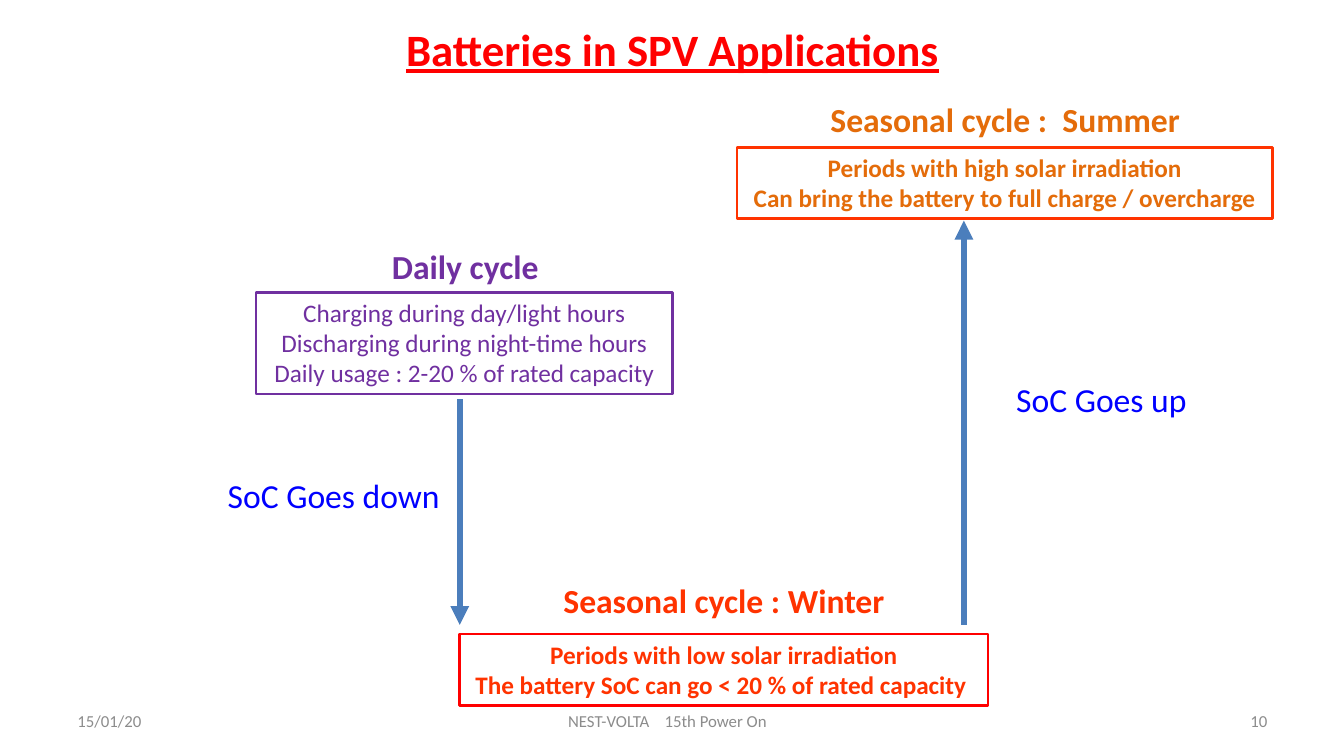
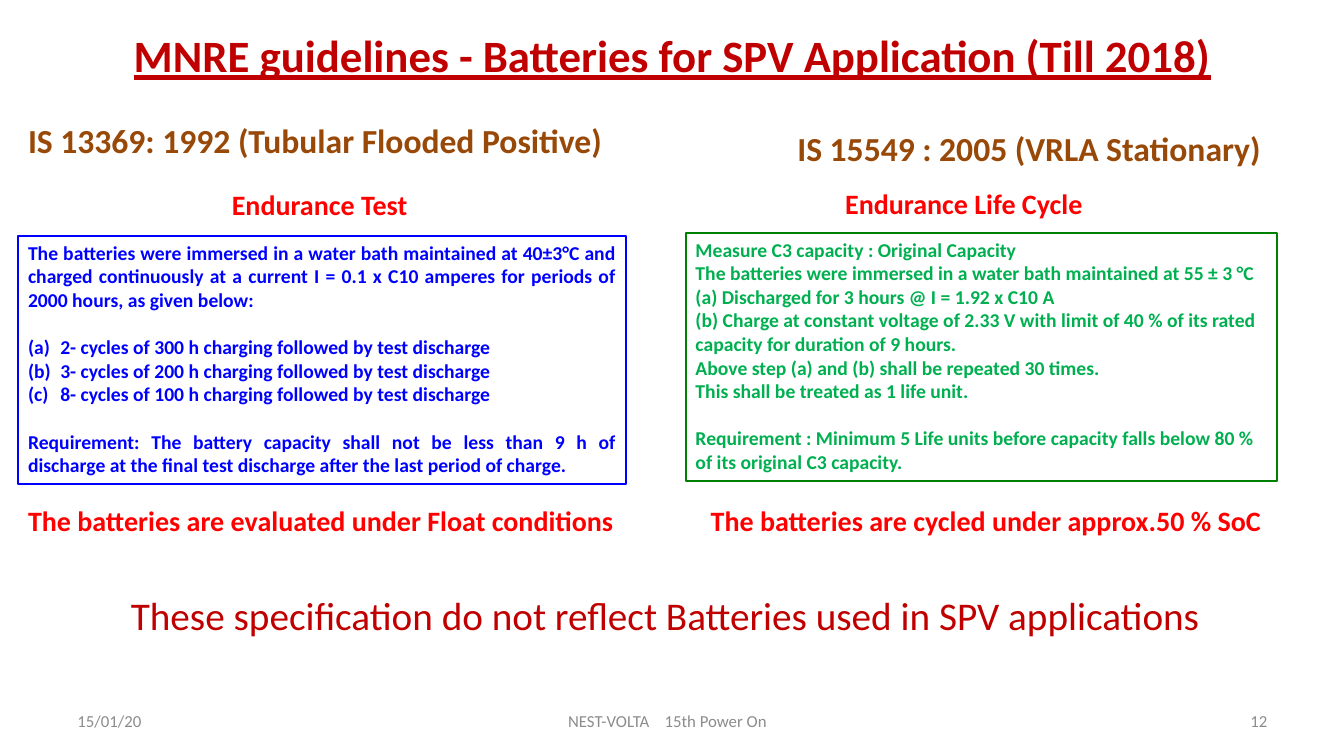
from lxml.etree import SubElement
from pptx import Presentation
from pptx.dml.color import RGBColor
from pptx.enum.shapes import MSO_CONNECTOR as Connector, MSO_SHAPE as Shape
from pptx.enum.text import MSO_ANCHOR as Anchor, PP_ALIGN as Align
from pptx.oxml.ns import qn
from pptx.util import Inches, Pt

RED, DARK_RED, VERMILION = "FF0000", "C00000", "FF3300"
ORANGE, BROWN, PURPLE = "E46C0A", "984807", "7030A0"
BLUE, STEEL, GREY = "0000FF", "4B7EBC", "8C8C8C"
GREEN, DARK_GREEN = "00B050", "008000"
FONT = "Calibri"
BLANK_LINE = 17  # points, the height of one line of 14 point text


def colour(hex_code):
    return RGBColor.from_string(hex_code)


class Slides:
    """Holds the shared style and the slide being built."""

    def __init__(self):
        self.deck = Presentation()
        self.deck.slide_width, self.deck.slide_height = Inches(13.33), Inches(7.5)
        self.page = None

    def new_page(self, title, title_colour, title_height, number):
        self.page = self.deck.slides.add_slide(self.deck.slide_layouts[5])
        box = self.page.shapes.title
        box.left, box.top = Inches(0.67), Inches(0)
        box.width, box.height = Inches(12), Inches(title_height)
        box.text_frame.vertical_anchor = Anchor.MIDDLE
        para = box.text_frame.paragraphs[0]
        para.alignment = Align.CENTER
        self.span(para, title, 32, title_colour, bold=True).font.underline = True
        self.footer(number)

    def footer(self, number):
        top, height = 6.95, 0.4
        date = self.label("15/01/20", 0.67, top, 3.11, height, 12, GREY)
        event = self.label("NEST-VOLTA", 4.51, top, 4.22, height, 12, GREY, align=Align.CENTER)
        page_number = self.label(number, 9.56, top, 3.11, height, 12, GREY, align=Align.RIGHT)
        # One widely spaced blank separates the host from the event
        para = event.text_frame.paragraphs[0]
        gap = self.span(para, " ", 12, GREY)
        gap.font._element.set("spc", "800")
        self.span(para, "15th Power On", 12, GREY)
        for box in (date, event, page_number):
            box.text_frame.vertical_anchor = Anchor.MIDDLE

    def span(self, para, text, size, hex_code, bold=False):
        span = para.add_run()
        span.text = text
        font = span.font
        font.name, font.size, font.bold = FONT, Pt(size), bold
        font.color.rgb = colour(hex_code)
        return span

    def label(self, text, left, top, width, height, size, hex_code,
              bold=False, align=Align.LEFT):
        box = self.page.shapes.add_textbox(
            Inches(left), Inches(top), Inches(width), Inches(height))
        box.text_frame.word_wrap = False
        para = box.text_frame.paragraphs[0]
        para.alignment = align
        self.span(para, text, size, hex_code, bold)
        return box

    def panel(self, lines, left, top, width, height, size, text_colour, line_colour,
              line_width, bold=True, align=Align.CENTER):
        """Outlined box with one paragraph per line; returns its paragraphs."""
        box = self.page.shapes.add_shape(
            Shape.RECTANGLE, Inches(left), Inches(top), Inches(width), Inches(height))
        box.shadow.inherit = False
        box.fill.background()
        box.line.color.rgb = colour(line_colour)
        box.line.width = Pt(line_width)
        frame = box.text_frame
        frame.word_wrap = True
        frame.vertical_anchor = Anchor.TOP
        for index, line in enumerate(lines):
            para = frame.add_paragraph() if index else frame.paragraphs[0]
            para.alignment = align
            self.span(para, line, size, text_colour, bold)
        return frame.paragraphs

    def letter(self, paras, indent):
        """Number paragraphs (a), (b), (c) with a hanging indent."""
        for para in paras:
            props = para._p.get_or_add_pPr()
            props.set("marL", str(Inches(indent)))
            props.set("indent", str(-Inches(indent)))
            SubElement(props, qn("a:buFont"), typeface="+mj-lt")
            SubElement(props, qn("a:buAutoNum"), type="alphaLcParenBoth")

    def arrow(self, x, start, end):
        line = self.page.shapes.add_connector(
            Connector.STRAIGHT, Inches(x), Inches(start), Inches(x), Inches(end))
        line.line.color.rgb = colour(STEEL)
        line.line.width = Pt(4.5)
        SubElement(line.line._get_or_add_ln(), qn("a:tailEnd"), type="triangle")
        SubElement(line._element.spPr, qn("a:effectLst"))


def build_cycles(slides):
    slides.new_page("Batteries in SPV Applications", RED, 0.97, "10")

    # Boxes for the three cycles
    slides.panel(["Charging during day/light hours",
                  "Discharging during night-time hours",
                  "Daily usage : 2-20 % of rated capacity"],
                 2.54, 2.9, 4.13, 1.01, 18, PURPLE, PURPLE, 2, bold=False)
    slides.panel(["Periods with low solar irradiation",
                  "The battery SoC can go < 20 % of rated capacity "],
                 4.56, 6.29, 5.24, 0.71, 18, VERMILION, RED, 1.75)
    slides.panel(["Periods with high solar irradiation",
                  "Can bring the battery to full charge / overcharge"],
                 7.31, 1.46, 5.31, 0.71, 18, ORANGE, VERMILION, 2)

    # Headings above the boxes
    for text, left, top, width, hex_code in (
            ("Daily cycle", 3.78, 2.39, 1.67, PURPLE),
            ("Seasonal cycle : Winter", 5.47, 5.7, 3.42, VERMILION),
            ("Seasonal cycle :  Summer", 8.12, 0.93, 3.7, ORANGE)):
        slides.label(text, left, top, width, 0.5, 24, hex_code, True, Align.CENTER)

    # Arrows and what they mean
    slides.arrow(4.56, 3.96, 6.2)
    slides.arrow(9.56, 6.2, 2.19)
    slides.label("SoC Goes down", 2.16, 4.66, 2.4, 0.5, 24, BLUE)
    slides.label("SoC Goes up", 9.98, 3.71, 1.91, 0.5, 24, BLUE)


def build_guidelines(slides):
    slides.new_page("MNRE guidelines - Batteries for SPV Application (Till 2018)",
                    DARK_RED, 1.09, "12")

    # Standards
    slides.label("IS 13369: 1992 (Tubular Flooded Positive)",
                 0.18, 1.14, 6.03, 0.5, 24, BROWN, True)
    slides.label("IS 15549 : 2005 (VRLA Stationary)",
                 7.81, 1.22, 4.86, 0.5, 24, BROWN, True)

    # Test names and conditions
    for text, left, top, width, align in (
            ("Endurance Test", 2.19, 1.81, 1.96, Align.CENTER),
            ("Endurance Life Cycle", 8.27, 1.8, 2.58, Align.CENTER),
            ("The batteries are evaluated under Float conditions",
             0.18, 4.95, 6.06, Align.LEFT),
            ("The batteries are cycled under approx.50 % SoC",
             6.95, 4.95, 5.72, Align.LEFT)):
        slides.label(text, left, top, width, 0.44, 20, RED, True, align)

    # Flooded battery test
    flooded = slides.panel(
        ["The batteries were immersed in a water bath maintained at 40±3°C and charged "
         "continuously at a current I = 0.1 x C10 amperes for periods of 2000 hours, "
         "as given below:",
         "2- cycles of 300 h charging followed by test discharge",
         "3- cycles of 200 h charging followed by test discharge",
         "8- cycles of 100 h charging followed by test discharge",
         "Requirement: The battery capacity shall not be less than 9 h of discharge at "
         "the final test discharge after the last period of charge."],
        0.18, 2.34, 6.03, 2.46, 14, BLUE, BLUE, 1.5, align=Align.JUSTIFY)

    # Sealed battery test
    sealed = slides.panel(
        ["Measure C3 capacity : Original Capacity",
         "The batteries were immersed in a water bath maintained at 55 ± 3 °C",
         "(a) Discharged for 3 hours @ I = 1.92 x C10 A",
         "(b) Charge at constant voltage of 2.33 V with limit of 40 % of its rated "
         "capacity for duration of 9 hours.",
         "Above step (a) and (b) shall be repeated 30 times.",
         "This shall be treated as 1 life unit.",
         "Requirement : Minimum 5 Life units before capacity falls below 80 % of its "
         "original C3 capacity."],
        6.8, 2.31, 5.87, 2.46, 14, GREEN, DARK_GREEN, 1.5, align=Align.LEFT)

    for para in (flooded[1], flooded[-1], sealed[-1]):
        para.space_before = Pt(BLANK_LINE)
    slides.letter(flooded[1:4], 0.32)

    # Conclusion
    slides.label("These specification do not reflect Batteries used in SPV applications",
                 1.2, 5.82, 10.93, 0.57, 28, DARK_RED)


def main():
    slides = Slides()
    build_cycles(slides)
    build_guidelines(slides)
    slides.deck.save("out.pptx")


if __name__ == "__main__":
    main()
